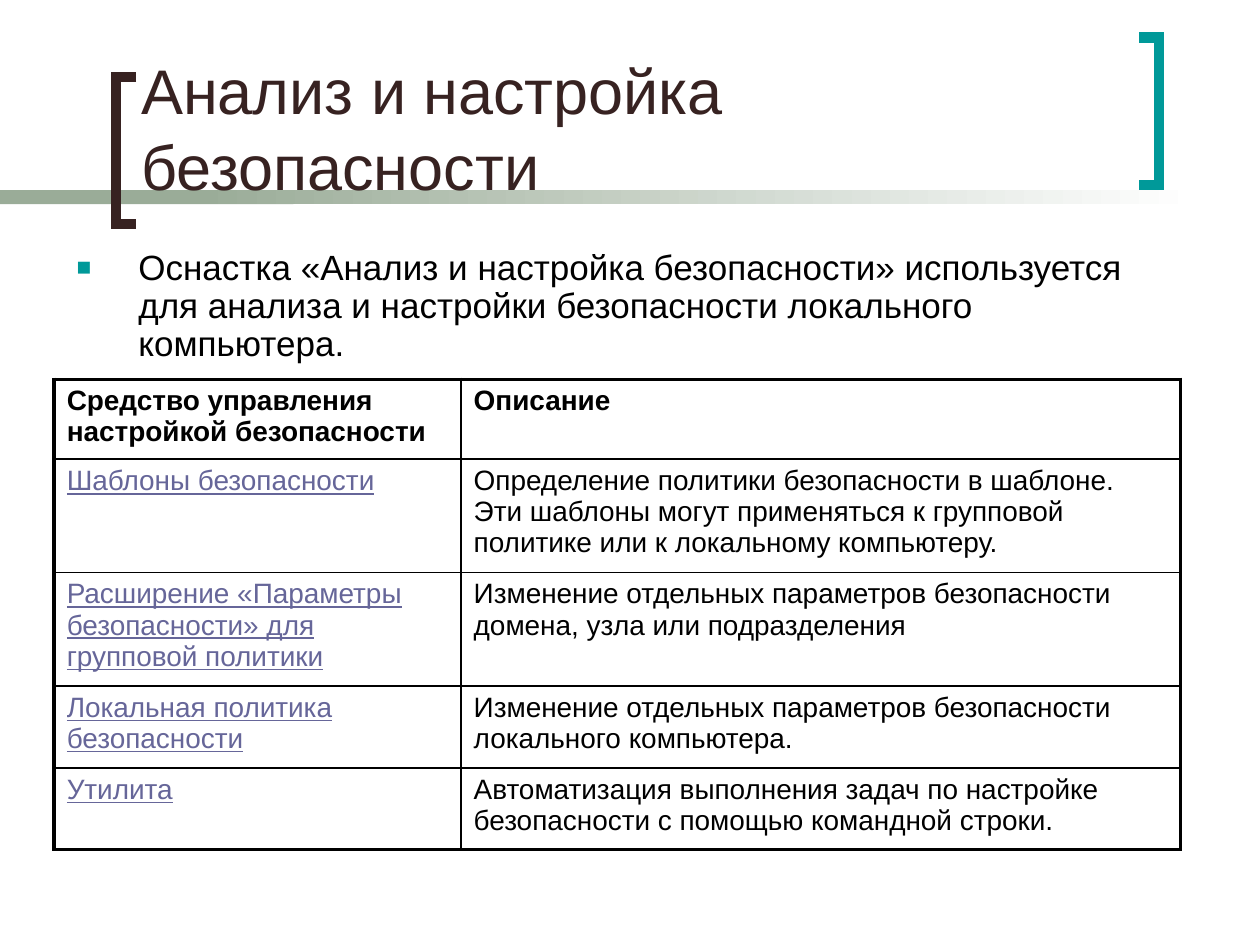
from lxml import etree
from pptx import Presentation
from pptx.dml.color import RGBColor as RGB
from pptx.enum.shapes import MSO_SHAPE as SHAPE
from pptx.enum.text import MSO_ANCHOR as ANCHOR, MSO_AUTO_SIZE as AUTO, PP_ALIGN as ALIGN
from pptx.oxml.ns import qn
from pptx.util import Inches, Pt

COLORS = {
    "sage": "9AAC98",
    "white": "FFFFFF",
    "brown": "372221",
    "teal": "009999",
    "black": "000000",
    "link": "666699",
}
FONT = "Arial"
THIN, THICK = 1, 2.25

COLUMNS = [3.23, 5.71]
ROWS = [0.6, 0.84, 0.84, 0.65, 0.65]
TOOLS = [
    ("Средство управления настройкой безопасности", "Описание"),
    ("Шаблоны безопасности",
     "Определение политики безопасности в шаблоне. Эти шаблоны могут "
     "применяться к групповой политике или к локальному компьютеру."),
    ("Расширение «Параметры безопасности» для групповой политики",
     "Изменение отдельных параметров безопасности домена, узла или подразделения"),
    ("Локальная политика безопасности",
     "Изменение отдельных параметров безопасности локального компьютера."),
    ("Утилита",
     "Автоматизация выполнения задач по настройке безопасности "
     "с помощью командной строки."),
]


def color(name):
    return RGB.from_string(COLORS[name])


def sub(parent, tag, **attrs):
    return etree.SubElement(parent, qn(tag), **attrs)


def write(p, text, size=16, ink="black", bold=False, underline=False, spacing=None):
    p.alignment = ALIGN.LEFT
    if spacing:
        p.line_spacing = spacing
    r = p.add_run()
    r.text = text
    r.font.name = FONT
    r.font.size = Pt(size)
    r.font.bold = bold
    r.font.underline = underline
    r.font.color.rgb = color(ink)


class SlideBuilder:
    def __init__(self, prs):
        self.s = prs.slides.add_slide(prs.slide_layouts[5])

    def bar(self, x, y, w, h, start, end=None):
        sp = self.s.shapes.add_shape(SHAPE.RECTANGLE, *map(Inches, (x, y, w, h)))
        sp.shadow.inherit = False
        sp.line.fill.background()
        if end:
            sp.fill.gradient()
            sp.fill.gradient_angle = 0
            for stop, name in zip(sp.fill.gradient_stops, (start, end)):
                stop.color.rgb = color(name)
        else:
            sp.fill.solid()
            sp.fill.fore_color.rgb = color(start)

    def bracket(self, spine, tip, top, bottom, ink):
        points = [(tip, top), (spine, top), (spine, bottom), (tip, bottom)]
        start, *rest = [(Inches(x), Inches(y)) for x, y in points]
        builder = self.s.shapes.build_freeform(*start)
        builder.add_line_segments(rest, close=False)
        sp = builder.convert_to_shape()
        sp.shadow.inherit = False
        sp.fill.background()
        sp.line.width = Pt(6)
        sp.line.color.rgb = color(ink)
        sub(sp.line._get_or_add_ln(), "a:miter", lim="800000")

    def title(self, text, x, y, w, h):
        sp = self.s.shapes.title
        self.s.shapes._spTree.append(sp._element)
        sp.left, sp.top, sp.width, sp.height = map(Inches, (x, y, w, h))
        tf = sp.text_frame
        tf.auto_size = AUTO.NONE
        tf.word_wrap = True
        tf.vertical_anchor = ANCHOR.BOTTOM
        write(tf.paragraphs[0], text, size=36, ink="brown")

    def bullet(self, text, x, y, w, h):
        tf = self.s.shapes.add_textbox(*map(Inches, (x, y, w, h))).text_frame
        tf.word_wrap = True
        p = tf.paragraphs[0]
        pPr = p._p.get_or_add_pPr()
        pPr.set("marL", str(Inches(0.49)))
        pPr.set("indent", str(-Inches(0.49)))
        sub(sub(pPr, "a:buClr"), "a:srgbClr", val=COLORS["teal"])
        sub(pPr, "a:buSzPct", val="70000")
        sub(pPr, "a:buFont", typeface=FONT)
        sub(pPr, "a:buChar", char="■")
        write(p, text, size=20, spacing=0.9)

    def borders(self, cell, **widths):
        tcPr = cell._tc.get_or_add_tcPr()
        for side, width in widths.items():
            ln = sub(tcPr, f"a:ln{side}", w=str(Pt(width)))
            sub(sub(ln, "a:solidFill"), "a:srgbClr", val=COLORS["black"])

    def table(self, data, x, y, columns, rows):
        size = map(Inches, (x, y, sum(columns), sum(rows)))
        tbl = self.s.shapes.add_table(len(rows), len(columns), *size).table
        tbl.first_row = tbl.horz_banding = False
        for col, width in zip(tbl.columns, columns):
            col.width = Inches(width)
        for row, height in zip(tbl.rows, rows):
            row.height = Inches(height)
        last_row, last_col = len(rows) - 1, len(columns) - 1
        for i, texts in enumerate(data):
            for j, text in enumerate(texts):
                cell = tbl.cell(i, j)
                self.borders(
                    cell,
                    L=THICK if j == 0 else THIN,
                    R=THICK if j == last_col else THIN,
                    T=THICK if i == 0 else THIN,
                    B=THICK if i == last_row else THIN,
                )
                cell.fill.background()
                is_link = i > 0 and j == 0
                write(cell.text_frame.paragraphs[0], text, bold=i == 0,
                      ink="link" if is_link else "black", underline=is_link)


def main():
    prs = Presentation()
    prs.slide_width, prs.slide_height = Inches(10), Inches(7.5)
    b = SlideBuilder(prs)
    b.bar(0, 1.51, 2.33, 0.11, "sage")
    b.bar(1.58, 1.51, 7.92, 0.11, "sage", "white")
    b.bracket(0.92, 1.08, 0.61, 1.78, "brown")
    b.bracket(9.2, 9.04, 0.3, 1.47, "teal")
    b.title("Анализ и настройка безопасности", 1.02, 0.11, 7.83, 1.55)
    b.bullet("Оснастка «Анализ и настройка безопасности» используется для анализа "
             "и настройки безопасности локального компьютера.", 0.51, 1.94, 8.9, 0.82)
    b.table(TOOLS, 0.43, 3.01, COLUMNS, ROWS)
    prs.save("out.pptx")


if __name__ == "__main__":
    main()
